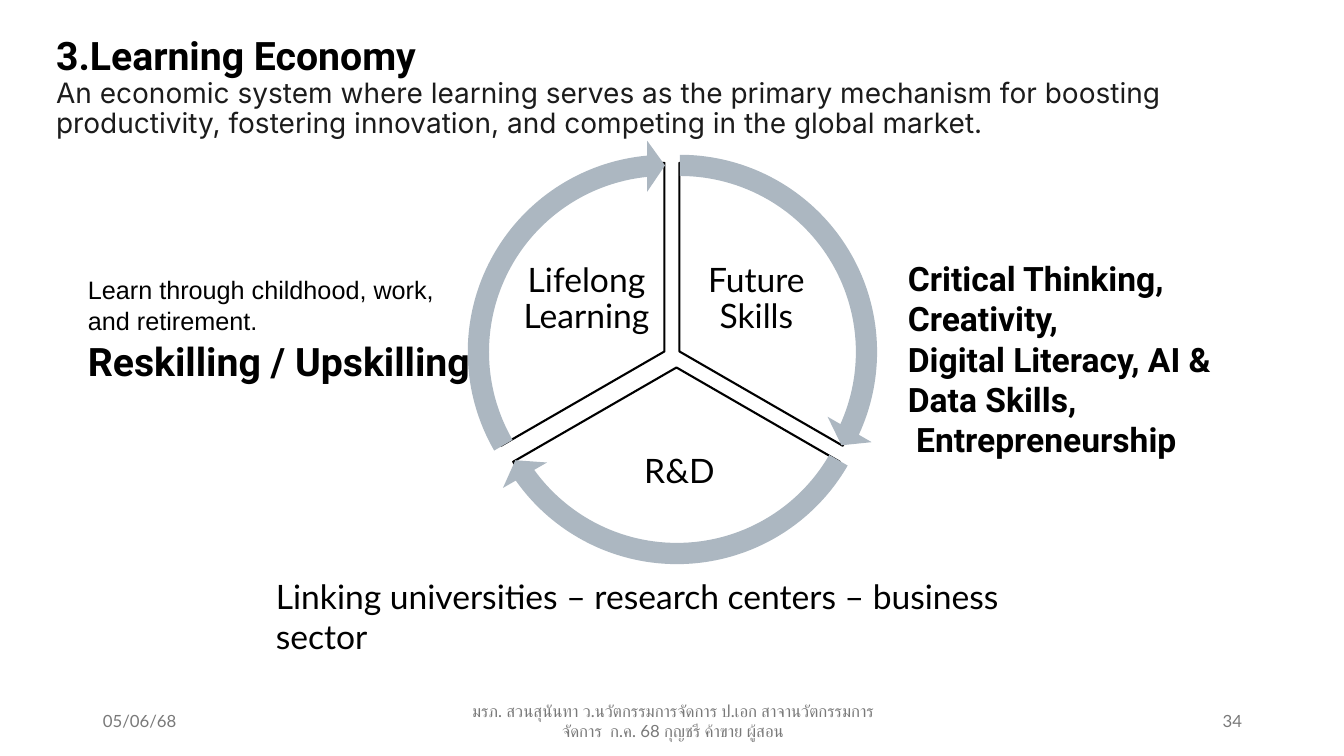
from pptx import Presentation
from pptx.dml.color import RGBColor
from pptx.enum.shapes import MSO_SHAPE as Kind
from pptx.enum.text import MSO_ANCHOR as Anchor, MSO_AUTO_SIZE as Fit, PP_ALIGN as Align
from pptx.util import Emu, Pt

SCALE = 914400 / 100.8
COLORS = {"ink": "000000", "body": "1C1C1C", "foot": "797979", "ring": "ACB7C1", "white": "FFFFFF"}


def place(*sizes):
    return [Emu(round(size * SCALE)) for size in sizes]


def write(frame, text, size=24, font="Lato", color="ink", bold=False, align=Align.LEFT, lead=1.0, gap=0):
    para = frame.paragraphs[0]
    if para.runs:
        para = frame.add_paragraph()
    para.alignment, para.line_spacing, para.space_after = align, lead, Pt(gap)
    run = para.add_run()
    run.text = text
    run.font.size, run.font.name, run.font.bold = Pt(size), font, bold
    run.font.color.rgb = RGBColor.from_string(COLORS[color])


deck = Presentation()
deck.slide_width, deck.slide_height = place(1344, 756)
slide = deck.slides.add_slide(deck.slide_layouts[5])

title = slide.shapes.title
title.left, title.top, title.width, title.height = place(46, 37, 1159, 104)
frame = title.text_frame
frame.word_wrap, frame.auto_size = True, Fit.NONE
frame.vertical_anchor = Anchor.TOP
frame.margin_top = frame.margin_bottom = 0
write(frame, "3.Learning Economy", size=28, font="Roboto", bold=True, lead=0.9)
write(
    frame,
    "An economic system where learning serves as the primary mechanism for boosting "
    "productivity, fostering innovation, and competing in the global market.",
    size=20, font="Inter", color="body", lead=0.9,
)

footer = [
    (93, 302, "05/06/68", Align.LEFT),
    (446, 454, "มรภ. สวนสุนันทา ว.นวัตกรรมการจัดการ ป.เอก สาจานวัตกรรมการจัดการ  ก.ค. 68 กุญชรี ค้าขาย ผู้สอน", Align.CENTER),
    (950, 302, "34", Align.RIGHT),
]
for left, width, text, align in footer:
    frame = slide.shapes.add_textbox(*place(left, 701, width, 40)).text_frame
    frame.word_wrap, frame.vertical_anchor = True, Anchor.MIDDLE
    write(frame, text, size=12, color="foot", align=align)

cycle = slide.shapes.add_group_shape().shapes
sectors = [
    ("Future Skills", (491, 163), (162, 18), (689, 244, 135, 112)),
    ("R&D", (488, 179), (18, 90), (578, 423, 203, 99)),
    ("Lifelong Learning", (476, 163), (90, 162), (519, 244, 135, 112)),
]
for text, spot, angles, box in sectors:
    pie = cycle.add_shape(Kind.PIE, *place(*spot, 377, 377))
    pie.shadow.inherit = False
    pie.adjustments[0], pie.adjustments[1] = angles
    pie.fill.solid()
    pie.fill.fore_color.rgb = RGBColor.from_string(COLORS["white"])
    pie.line.color.rgb = RGBColor.from_string(COLORS["ink"])
    pie.line.width = Pt(1.5)
    frame = cycle.add_textbox(*place(*box)).text_frame
    frame.word_wrap, frame.vertical_anchor = True, Anchor.MIDDLE
    frame.margin_left = frame.margin_right = frame.margin_top = frame.margin_bottom = place(3)[0]
    write(frame, text, align=Align.CENTER, lead=0.9)

arrows = [(468, 140, 14.73, 162), (465, 155, 86.72, 18), (453, 140, 158.73, 90)]
for left, top, end, start in arrows:
    arrow = cycle.add_shape(Kind.CIRCULAR_ARROW, *place(left, top, 424, 424))
    arrow.shadow.inherit = False
    for index, value in enumerate((0.05, 3.28, end, start, 0.06)):
        arrow.adjustments[index] = value
    arrow.fill.solid()
    arrow.fill.fore_color.rgb = RGBColor.from_string(COLORS["ring"])
    arrow.line.fill.background()

small = {"size": 18, "font": "Arial", "gap": 1}
strong = {"font": "Roboto", "bold": True}
notes = [
    ((78, 269, 622, 120), [
        ("Learn through childhood, work,", small),
        ("and retirement.", small),
        ("Reskilling / Upskilling", {**strong, "size": 28}),
    ]),
    ((898, 253, 369, 212), [
        ("Critical Thinking, Creativity,", strong),
        ("Digital Literacy, AI & Data Skills,", strong),
        (" Entrepreneurship", strong),
    ]),
    ((266, 571, 828, 91), [("Linking universities – research centers – business sector", {})]),
]
for box, lines in notes:
    frame = slide.shapes.add_textbox(*place(*box)).text_frame
    frame.word_wrap = True
    for text, style in lines:
        write(frame, text, **style)

deck.save("out.pptx")
